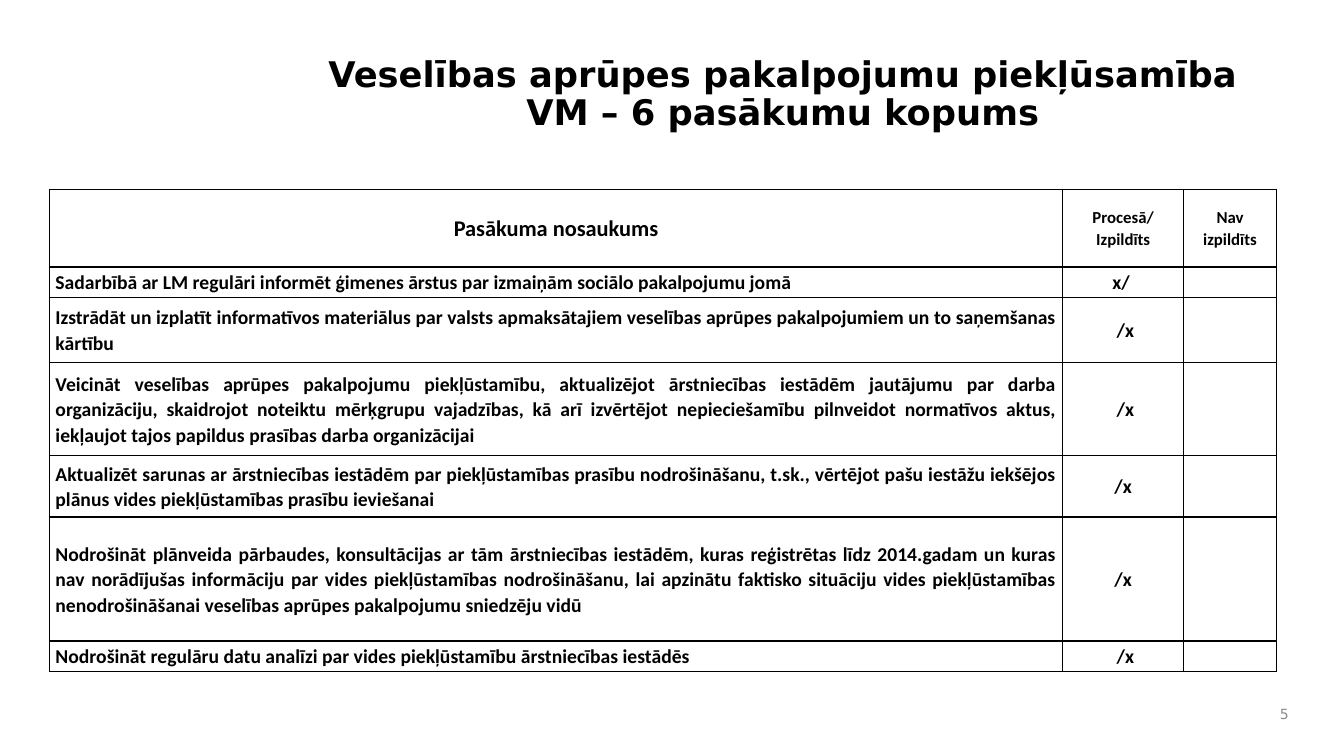
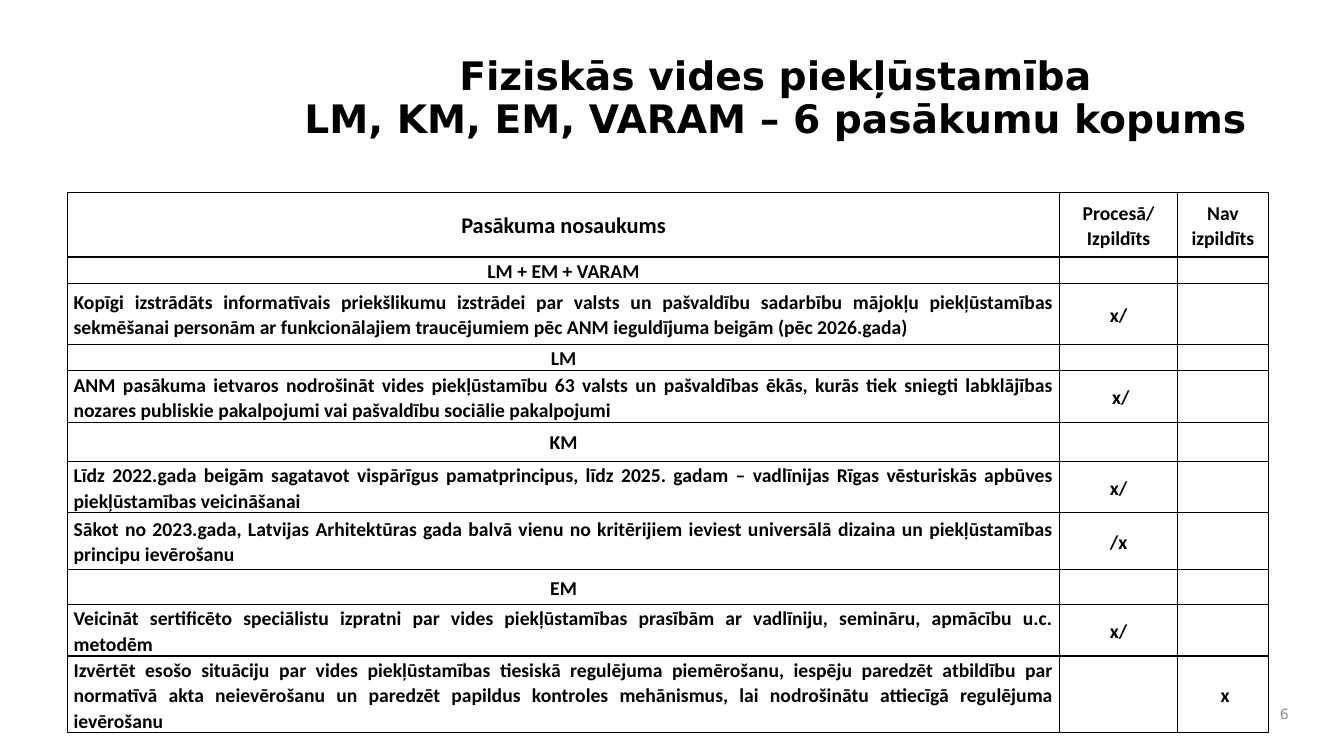
from lxml.etree import SubElement
from pptx import Presentation
from pptx.dml.color import RGBColor
from pptx.enum.text import MSO_ANCHOR, MSO_AUTO_SIZE, PP_ALIGN
from pptx.oxml.ns import qn
from pptx.util import Inches, Pt

BLACK = "000000"
GREY = "8C8C8C"
HEADING_FONT = "DejaVu Sans"
TABLE_FONT = "Calibri"
BODY_SIZE = 14
HEADERS = ("Pasākuma nosaukums", "Procesā/ Izpildīts", "Nav izpildīts")

# Each row: height, measure, in progress / done, not done
PAGES = [
    {
        "number": 5,
        "title": "Veselības aprūpes pakalpojumu piekļūsamība\nVM – 6 pasākumu kopums",
        "title_box": (2.86, 0.38, 9.81, 1.13),
        "title_size": 25.2,
        "table_at": (0.49, 1.88),
        "columns": (10.05, 1.2, 0.92),
        "top_margin": 0,
        "header_height": 0.77,
        "header_sizes": (16, 12, 12),
        "rows": [
            (0.3, "Sadarbībā ar LM regulāri informēt ģimenes ārstus par izmaiņām sociālo "
                  "pakalpojumu jomā", "x/ ", ""),
            (0.65, "Izstrādāt un izplatīt informatīvos materiālus par valsts apmaksātajiem "
                   "veselības aprūpes pakalpojumiem un to saņemšanas kārtību", " /x", ""),
            (0.92, "Veicināt veselības aprūpes pakalpojumu piekļūstamību, aktualizējot "
                   "ārstniecības iestādēm jautājumu par darba organizāciju, skaidrojot noteiktu "
                   "mērķgrupu vajadzības, kā arī izvērtējot nepieciešamību pilnveidot normatīvos "
                   "aktus, iekļaujot tajos papildus prasības darba organizācijai", " /x", ""),
            (0.61, "Aktualizēt sarunas ar ārstniecības iestādēm par piekļūstamības prasību "
                   "nodrošināšanu, t.sk., vērtējot pašu iestāžu iekšējos plānus vides "
                   "piekļūstamības prasību ieviešanai", "/x", ""),
            (1.23, "Nodrošināt plānveida pārbaudes, konsultācijas ar tām ārstniecības iestādēm, "
                   "kuras reģistrētas līdz 2014.gadam un kuras nav norādījušas informāciju par "
                   "vides piekļūstamības nodrošināšanu, lai apzinātu faktisko situāciju vides "
                   "piekļūstamības nenodrošināšanai veselības aprūpes pakalpojumu sniedzēju vidū",
             "/x", ""),
            (0.3, "Nodrošināt regulāru datu analīzi par vides piekļūstamību ārstniecības "
                  "iestādēs", " /x", ""),
        ],
    },
    {
        "number": 6,
        "title": "Fiziskās vides piekļūstamība\nLM, KM, EM, VARAM – 6 pasākumu kopums",
        "title_box": (2.71, 0.42, 9.96, 1.13),
        "title_size": 28,
        "table_at": (0.67, 1.91),
        "columns": (9.84, 1.17, 0.9),
        "top_margin": 0.01,
        "header_height": 0.64,
        "header_sizes": (16, 14, 14),
        "rows": [
            (0.25, "LM + EM + VARAM", "", ""),
            (0.61, "Kopīgi izstrādāts informatīvais priekšlikumu izstrādei par valsts un "
                   "pašvaldību sadarbību mājokļu piekļūstamības sekmēšanai personām ar "
                   "funkcionālajiem traucējumiem pēc ANM ieguldījuma beigām (pēc 2026.gada)",
             "x/", ""),
            (0.25, "LM", "", ""),
            (0.43, "ANM pasākuma ietvaros nodrošināt vides piekļūstamību 63 valsts un pašvaldības "
                   "ēkās, kurās tiek sniegti labklājības nozares publiskie pakalpojumi vai "
                   "pašvaldību sociālie pakalpojumi", " x/", ""),
            (0.39, "KM", "", ""),
            (0.51, "Līdz 2022.gada beigām sagatavot vispārīgus pamatprincipus, līdz 2025. gadam – "
                   "vadlīnijas Rīgas vēsturiskās apbūves piekļūstamības veicināšanai", "x/", ""),
            (0.56, "Sākot no 2023.gada, Latvijas Arhitektūras gada balvā vienu no kritērijiem "
                   "ieviest universālā dizaina un piekļūstamības principu ievērošanu", "/x", ""),
            (0.35, "EM", "", ""),
            (0.41, "Veicināt sertificēto speciālistu izpratni par vides piekļūstamības prasībām "
                   "ar vadlīniju, semināru, apmācību u.c. metodēm", "x/", ""),
            (0.61, "Izvērtēt esošo situāciju par vides piekļūstamības tiesiskā regulējuma "
                   "piemērošanu, iespēju paredzēt atbildību par normatīvā akta neievērošanu un "
                   "paredzēt papildus kontroles mehānismus, lai nodrošinātu attiecīgā regulējuma "
                   "ievērošanu", "", " x"),
        ],
    },
]


def write(frame, text, font, size, color, bold, align, line_spacing=1, space_after=0):
    frame.text = text
    frame.vertical_anchor = MSO_ANCHOR.MIDDLE
    for para in frame.paragraphs:
        para.alignment = align
        para.line_spacing = line_spacing
        para.space_before = Pt(0)
        para.space_after = Pt(space_after)
        for span in para.runs:
            span.font.name = font
            span.font.size = Pt(size)
            span.font.bold = bold
            span.font.color.rgb = RGBColor.from_string(color)


def outline(cell):
    """Draw a thin black border on all four sides of a table cell."""
    properties = cell._tc.get_or_add_tcPr()
    for side in ("lnL", "lnR", "lnT", "lnB"):
        line = SubElement(properties, qn(f"a:{side}"), w=str(Pt(1)))
        fill = SubElement(line, qn("a:solidFill"))
        SubElement(fill, qn("a:srgbClr"), val=BLACK)


deck = Presentation()
deck.slide_width = Inches(13.33)
deck.slide_height = Inches(7.5)
title_only = deck.slide_layouts[5]

for content in PAGES:
    page = deck.slides.add_slide(title_only)

    title = page.shapes.title
    title.left, title.top, title.width, title.height = map(Inches, content["title_box"])
    write(title.text_frame, content["title"], HEADING_FONT, content["title_size"], BLACK,
          True, PP_ALIGN.CENTER, line_spacing=0.9)
    title.text_frame.auto_size = MSO_AUTO_SIZE.NONE

    number_box = page.shapes.add_textbox(Inches(12.44), Inches(6.92), Inches(0.44), Inches(0.33))
    number_box.text_frame.word_wrap = True
    write(number_box.text_frame, str(content["number"]), HEADING_FONT, 10, GREY,
          False, PP_ALIGN.RIGHT)

    rows = [(content["header_height"], *HEADERS), *content["rows"]]
    columns = content["columns"]
    left, top = content["table_at"]
    table = page.shapes.add_table(
        len(rows), len(columns), Inches(left), Inches(top),
        Inches(sum(columns)), Inches(sum(row[0] for row in rows))).table
    table.first_row = False
    table.horz_banding = False
    for column, width in zip(table.columns, columns):
        column.width = Inches(width)

    for row_index, (height, *texts) in enumerate(rows):
        table.rows[row_index].height = Inches(height)
        is_measure = row_index > 0 and any(texts[1:])
        sizes = content["header_sizes"] if row_index == 0 else (BODY_SIZE,) * len(columns)
        for column_index, (text, size) in enumerate(zip(texts, sizes)):
            cell = table.cell(row_index, column_index)
            outline(cell)
            cell.fill.background()
            cell.vertical_anchor = MSO_ANCHOR.MIDDLE
            cell.margin_left = cell.margin_right = Inches(0.06)
            cell.margin_top = Inches(content["top_margin"])
            cell.margin_bottom = 0
            justified = is_measure and column_index == 0
            write(cell.text_frame, text, TABLE_FONT, size, BLACK, True,
                  PP_ALIGN.JUSTIFY if justified else PP_ALIGN.CENTER,
                  line_spacing=1.07, space_after=4)
            if not text:
                # Keeps an empty cell from stretching its row
                para = cell.text_frame.paragraphs[0]
                SubElement(para._p, qn("a:endParaRPr"), sz=str(BODY_SIZE * 100))

deck.save("out.pptx")
